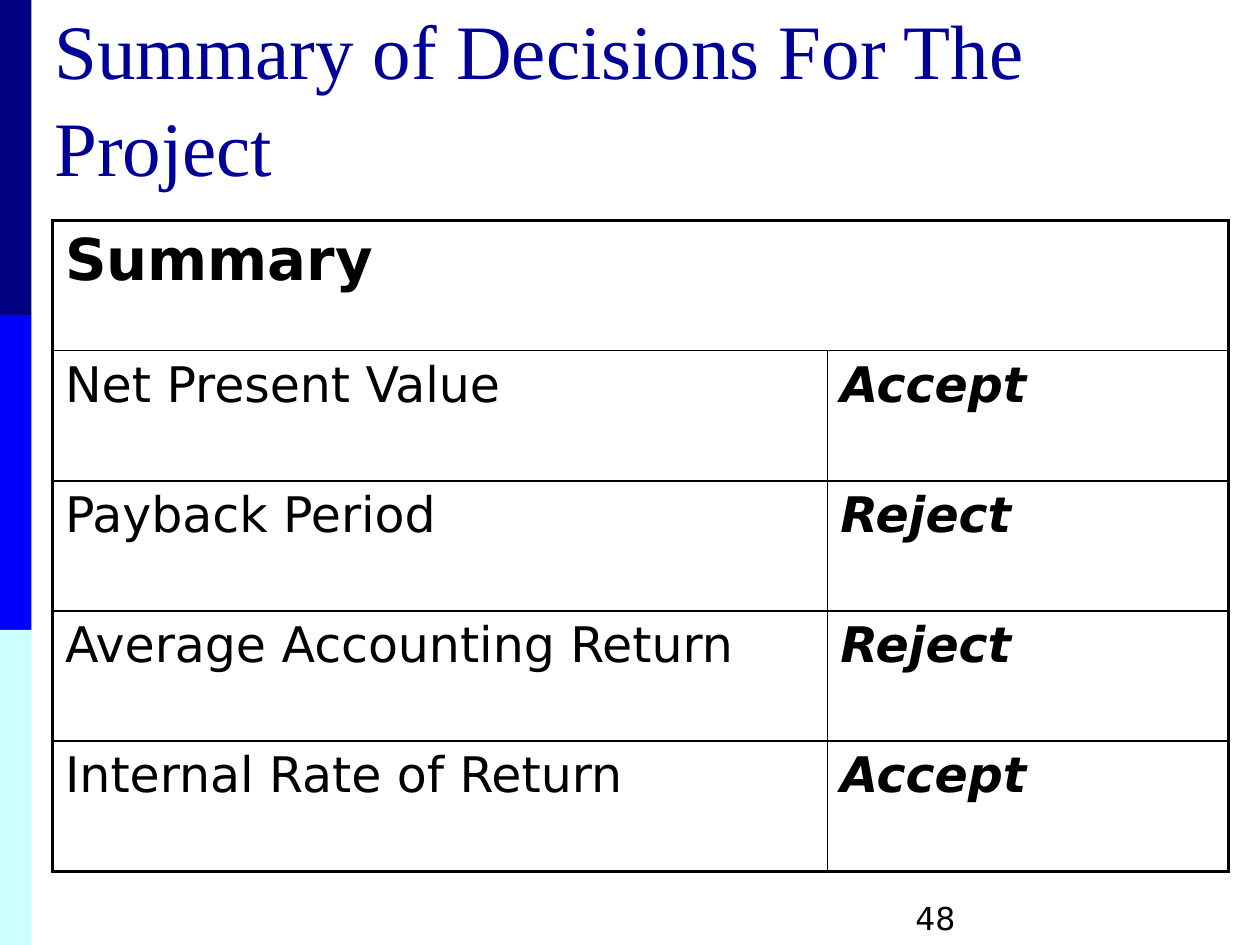
from dataclasses import dataclass

from lxml import etree
from pptx import Presentation
from pptx.dml.color import RGBColor
from pptx.enum.shapes import MSO_SHAPE
from pptx.enum.text import MSO_ANCHOR, MSO_AUTO_SIZE, PP_ALIGN
from pptx.oxml.ns import qn
from pptx.util import Pt

RECTANGLE = MSO_SHAPE.RECTANGLE
BOTTOM = MSO_ANCHOR.BOTTOM
TOP = MSO_ANCHOR.TOP
LEFT = PP_ALIGN.LEFT
NO_AUTOFIT = MSO_AUTO_SIZE.NONE
TITLE_ONLY = 5


@dataclass(frozen=True)
class Theme:
    title_font: str = "Times New Roman"
    body_font: str = "DejaVu Sans"
    title_color: str = "000099"
    ink: str = "000000"
    bands: tuple = ("000080", "0000FF", "CCFFFF")
    title_size: int = 44
    header_size: int = 33
    body_size: int = 28
    number_size: int = 18
    outer_line: float = 2.25
    inner_line: float = 1


THEME = Theme()
DECISIONS = (
    ("Net Present Value", "Accept"),
    ("Payback Period", "Reject"),
    ("Average Accounting Return", "Reject"),
    ("Internal Rate of Return", "Accept"),
)


def format_text(frame, font, size, color, bold=False, italic=False):
    for para in frame.paragraphs:
        para.alignment = LEFT
        for span in para.runs:
            span.font.name = font
            span.font.size = Pt(size)
            span.font.color.rgb = RGBColor.from_string(color)
            span.font.bold = bold
            span.font.italic = italic


def add_side_bands(page):
    height = 180
    for index, color in enumerate(THEME.bands):
        band = page.shapes.add_shape(RECTANGLE, 0, Pt(index * height), Pt(18), Pt(height))
        band.shadow.inherit = False
        band.fill.solid()
        band.fill.fore_color.rgb = RGBColor.from_string(color)
        band.line.fill.background()


def set_title(page, text):
    title = page.shapes.title
    title.left, title.top, title.width, title.height = Pt(23.8), Pt(21.6), Pt(682), Pt(91.4)
    frame = title.text_frame
    frame.text = text
    frame.word_wrap = True
    frame.auto_size = NO_AUTOFIT
    frame.vertical_anchor = BOTTOM
    frame.paragraphs[0].line_spacing = 1.05
    format_text(frame, THEME.title_font, THEME.title_size, THEME.title_color)


def add_page_number(page, text):
    box = page.shapes.add_textbox(Pt(516), Pt(510), Pt(168), Pt(18))
    frame = box.text_frame
    frame.word_wrap = True
    frame.text = text
    format_text(frame, THEME.body_font, THEME.number_size, THEME.ink)


def set_borders(cell, outer_sides):
    properties = cell._tc.get_or_add_tcPr()
    for position, side in enumerate("LRTB"):
        width = THEME.outer_line if side in outer_sides else THEME.inner_line
        line = etree.Element(qn(f"a:ln{side}"), w=str(Pt(width)))
        fill = etree.SubElement(line, qn("a:solidFill"))
        etree.SubElement(fill, qn("a:srgbClr"), val=THEME.ink)
        properties.insert(position, line)


def fill_cell(cell, text, size, bold=False, italic=False):
    cell.text = text
    cell.vertical_anchor = TOP
    format_text(cell.text_frame, THEME.body_font, size, THEME.ink, bold, italic)


def add_decision_table(page):
    row_count = len(DECISIONS) + 1
    frame = page.shapes.add_table(row_count, 2, Pt(30), Pt(126), Pt(672), Pt(372))
    table = frame.table
    table.first_row = False
    table.horz_banding = False
    for column, width in zip(table.columns, (443, 229)):
        column.width = Pt(width)
    for row in table.rows:
        row.height = Pt(372 / row_count)

    header = table.cell(0, 0)
    header.merge(table.cell(0, 1))
    fill_cell(header, "Summary", THEME.header_size, bold=True)
    for index, (method, decision) in enumerate(DECISIONS, start=1):
        fill_cell(table.cell(index, 0), method, THEME.body_size)
        fill_cell(table.cell(index, 1), decision, THEME.body_size, bold=True, italic=True)

    for index in range(row_count):
        edge = {0: "T", row_count - 1: "B"}.get(index, "")
        for column, side in enumerate("LR"):
            cell = table.cell(index, column)
            cell.fill.background()
            set_borders(cell, edge + ("LR" if index == 0 else side))


def main():
    deck = Presentation()
    deck.slide_width, deck.slide_height = Pt(720), Pt(540)
    page = deck.slides.add_slide(deck.slide_layouts[TITLE_ONLY])
    add_side_bands(page)
    add_page_number(page, "48")
    set_title(page, "Summary of Decisions For The Project")
    add_decision_table(page)
    deck.save("out.pptx")


if __name__ == "__main__":
    main()
